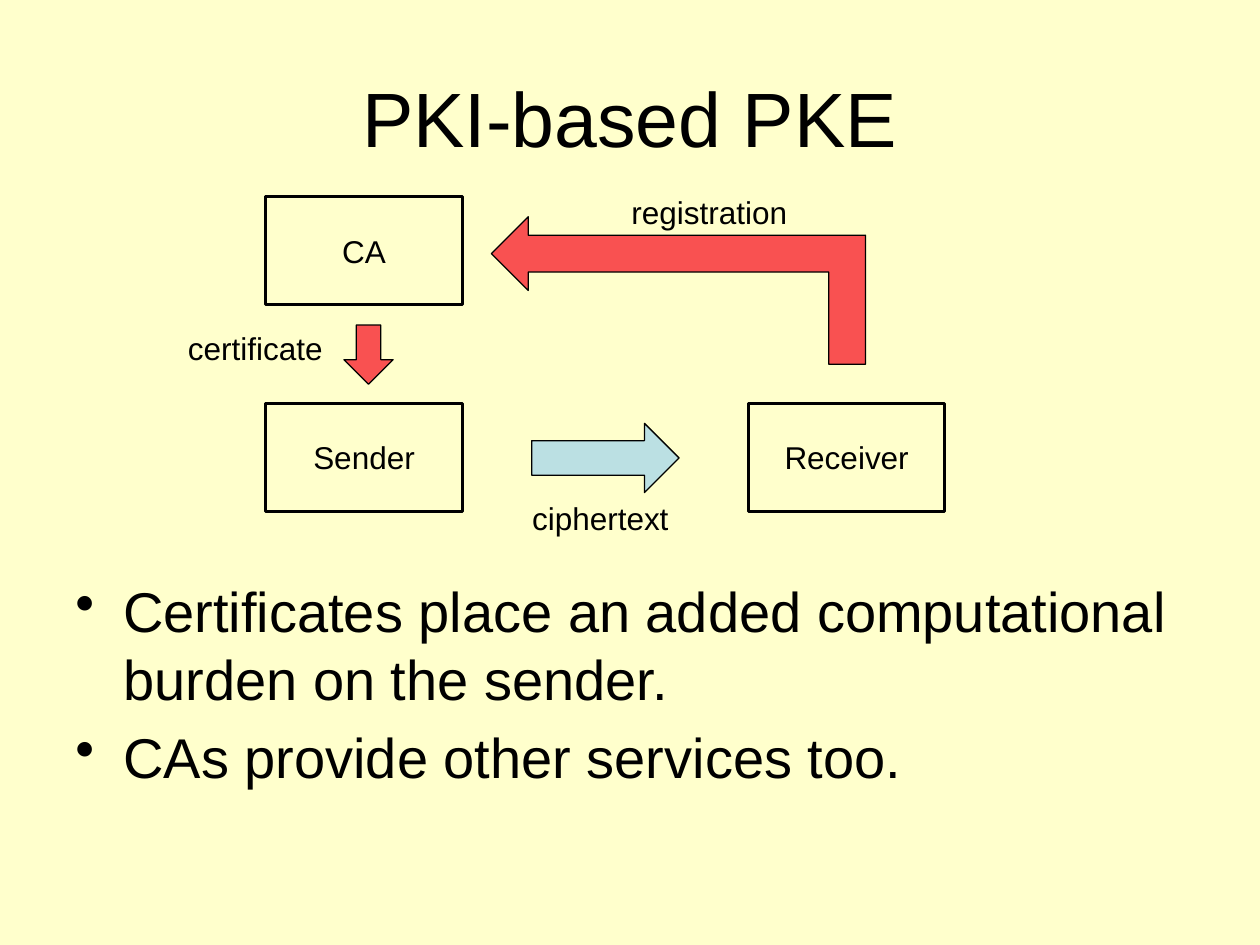
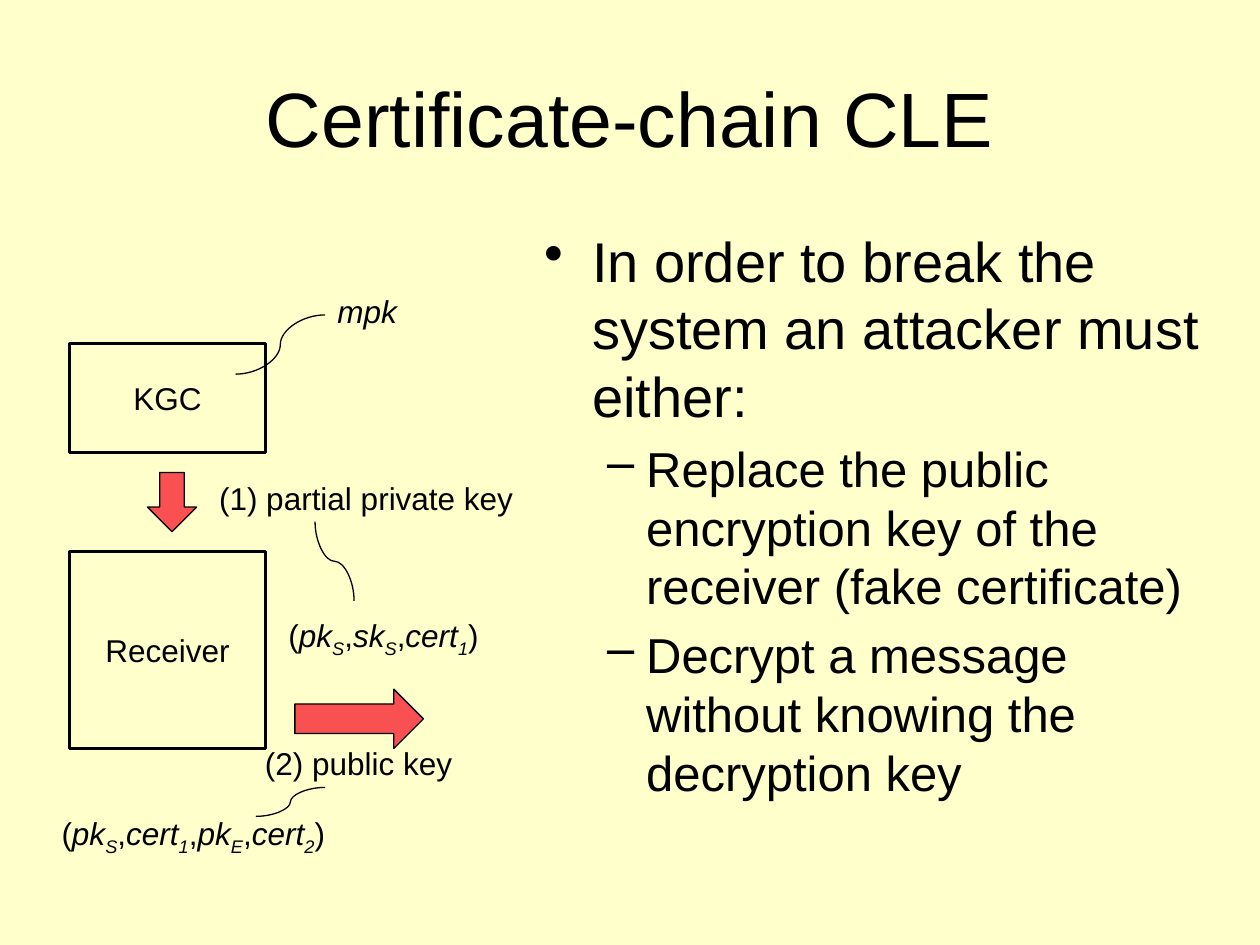
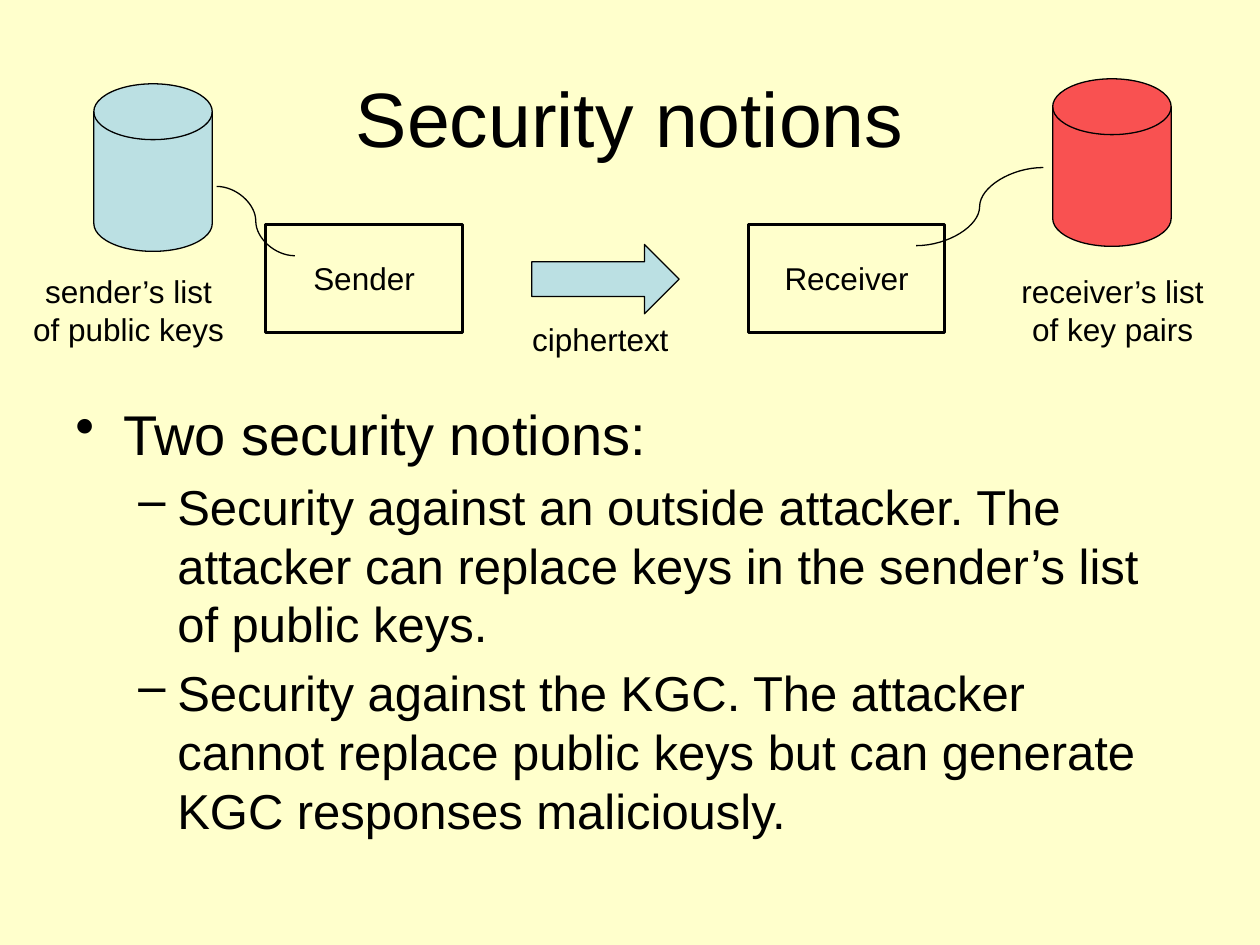
"""Build three slides on public key encryption with certificates."""
from lxml import etree
from pptx import Presentation
from pptx.dml.color import RGBColor
from pptx.enum.shapes import MSO_CONNECTOR, MSO_SHAPE
from pptx.enum.text import MSO_ANCHOR, PP_ALIGN
from pptx.oxml.ns import qn
from pptx.util import Inches, Pt

CURVE = MSO_CONNECTOR.CURVE
RECTANGLE = MSO_SHAPE.RECTANGLE
RIGHT_ARROW = MSO_SHAPE.RIGHT_ARROW
DOWN_ARROW = MSO_SHAPE.DOWN_ARROW
BENT_ARROW = MSO_SHAPE.BENT_UP_ARROW
DRUM = MSO_SHAPE.FLOWCHART_DIRECT_ACCESS_STORAGE
MIDDLE = MSO_ANCHOR.MIDDLE
LEFT, CENTER, RIGHT = PP_ALIGN.LEFT, PP_ALIGN.CENTER, PP_ALIGN.RIGHT

FONT = "Arial"
CREAM, BLACK, RED, BLUE = "FFFFCC", "000000", "F95151", "BBE0E3"
TITLE_SIZE, LABEL_SIZE = 44, 18
THIN, THICK = 0.75, 1.75
PARTY_WIDTH, PARTY_HEIGHT, LABEL_HEIGHT = 1.56, 0.86, 0.4
SENDER_LEFT, RECEIVER_LEFT, KEY_LEFT = 2.11, 5.94, 0.55
BULLETS = [("•", 32, 0.38, 0.38), ("–", 28, 0.81, 0.31)]


def color(value):
    """Turn a hex string into a colour."""
    return RGBColor.from_string(value)


class Deck:
    """Hold the shared style and the current slide."""

    def __init__(self):
        """Start an empty presentation with a cream background."""
        self.presentation = Presentation()
        self.presentation.slide_width = Inches(10)
        self.presentation.slide_height = Inches(7.5)
        fill = self.presentation.slide_master.background.fill
        fill.solid()
        fill.fore_color.rgb = color(CREAM)
        self.slide = None

    def add_slide(self, title):
        """Add a blank slide with a title."""
        layout = self.presentation.slide_layouts[6]
        self.slide = self.presentation.slides.add_slide(layout)
        frame = self.text_frame(0.5, 0.3, 9, 1.25)
        frame.vertical_anchor = MIDDLE
        self.set_text(frame.paragraphs[0], title, TITLE_SIZE, CENTER)

    def text_frame(self, left, top, width, height):
        """Add a wrapping text box and return its frame."""
        box = self.slide.shapes.add_textbox(*map(Inches, (left, top, width, height)))
        box.text_frame.word_wrap = True
        return box.text_frame

    def set_text(self, paragraph, text, size=LABEL_SIZE, alignment=LEFT, italic=False):
        """Fill a paragraph and style it."""
        paragraph.text = text
        paragraph.alignment = alignment
        font = paragraph.font
        font.name, font.size, font.italic = FONT, Pt(size), italic
        font.color.rgb = color(BLACK)

    def label(self, text, left, top, width, alignment=CENTER, height=LABEL_HEIGHT, italic=False):
        """Add a small text label."""
        frame = self.text_frame(left, top, width, height)
        self.set_text(frame.paragraphs[0], text, LABEL_SIZE, alignment, italic)

    def key_tuple(self, names, left, top, width):
        """Add a bracketed tuple of italic names with subscripts."""
        paragraph = self.text_frame(left, top, width, LABEL_HEIGHT).paragraphs[0]
        self.set_text(paragraph, "")
        for index, (name, subscript) in enumerate(names):
            paragraph.add_run().text = "," if index else "("
            for text, baseline in ((name, "0"), (subscript, "-25000")):
                run = paragraph.add_run()
                run.text = text
                run.font.italic = True
                run.font._element.set("baseline", baseline)
        paragraph.add_run().text = ")"

    def bullets(self, box, items):
        """Add a bulleted body from pairs of level and text."""
        frame = self.text_frame(*box)
        for index, (level, text) in enumerate(items):
            paragraph = frame.add_paragraph() if index else frame.paragraphs[0]
            mark, size, margin, hanging = BULLETS[level]
            paragraph.level = level
            properties = paragraph._p.get_or_add_pPr()
            properties.set("marL", str(Inches(margin)))
            properties.set("indent", str(-Inches(hanging)))
            etree.SubElement(properties, qn("a:buChar"), char=mark)
            paragraph.space_before = Pt(0.2 * size if index else 0)
            self.set_text(paragraph, text, size)

    def shape(self, kind, left, top, width, height, fill=None, rotation=0, line_width=THIN):
        """Add an outlined preset shape."""
        shape = self.slide.shapes.add_shape(kind, *map(Inches, (left, top, width, height)))
        shape.shadow.inherit = False
        shape.rotation = rotation
        if fill:
            shape.fill.solid()
            shape.fill.fore_color.rgb = color(fill)
        else:
            shape.fill.background()
        shape.line.color.rgb = color(BLACK)
        shape.line.width = Pt(line_width)
        return shape

    def party(self, name, left, top, height=PARTY_HEIGHT):
        """Add a named box for one party."""
        shape = self.shape(RECTANGLE, left, top, PARTY_WIDTH, height, line_width=THICK)
        shape.text_frame.vertical_anchor = MIDDLE
        self.set_text(shape.text_frame.paragraphs[0], name, LABEL_SIZE, CENTER)

    def channel(self, top):
        """Add a sender, a receiver and the ciphertext between them."""
        self.party("Sender", SENDER_LEFT, top)
        self.party("Receiver", RECEIVER_LEFT, top)
        self.shape(RIGHT_ARROW, 4.22, top + 0.16, 1.17, 0.55, BLUE)
        self.label("ciphertext", 4.06, top + 0.71, 1.41)

    def down_arrow(self, left, top):
        """Add a short red arrow pointing down."""
        self.shape(DOWN_ARROW, left, top, 0.39, 0.47, RED)

    def key_store(self, left, top, fill, text, text_left):
        """Add an upright drum with a caption below."""
        self.shape(DRUM, left, top, 1.33, 0.94, fill, 270)
        self.label(text, text_left, 2.11, 1.72, height=0.71)

    def curve(self, start, end, upright=False):
        """Add a curved line, leaving its start vertically when upright."""
        (x1, y1), (x2, y2) = start, end
        if upright:
            middle_x, middle_y = (x1 + x2) / 2, (y1 + y2) / 2
            half_x, half_y = (y2 - y1) / 2, (x2 - x1) / 2
            x1, x2 = middle_x + half_x, middle_x - half_x
            y1, y2 = middle_y - half_y, middle_y + half_y
        connector = self.slide.shapes.add_connector(CURVE, *map(Inches, (x1, y1, x2, y2)))
        properties = connector._element.spPr
        if upright:
            properties.find(qn("a:xfrm")).set("rot", str(270 * 60000))
        connector.line.color.rgb = color(BLACK)
        connector.line.width = Pt(THIN)
        etree.SubElement(properties, qn("a:effectLst"))


def add_pki(deck):
    """Show encryption based on a public key infrastructure."""
    deck.add_slide("PKI-based PKE")
    deck.bullets((0.5, 4.53, 9, 2.17), [
        (0, "Certificates place an added computational burden on the sender."),
        (0, "CAs provide other services too."),
    ])
    deck.channel(3.2)
    deck.party("CA", SENDER_LEFT, 1.56)
    deck.shape(BENT_ARROW, 4.8, 0.82, 1.17, 2.97, RED, 270)
    deck.down_arrow(2.73, 2.58)
    deck.label("registration", 4.3, 1.48, 2.66)
    deck.label("certificate", 0.86, 2.56, 1.8, RIGHT)


def add_certificate_chain(deck):
    """Show certificateless encryption with a chain of certificates."""
    deck.add_slide("Certificate-chain CLE")
    deck.bullets((4.22, 1.75, 5.55, 4.95), [
        (0, "In order to break the system an attacker must either:"),
        (1, "Replace the public encryption key of the receiver (fake certificate)"),
        (1, "Decrypt a message without knowing the decryption key"),
    ])
    deck.party("Receiver", KEY_LEFT, 4.38, PARTY_WIDTH)
    deck.party("KGC", KEY_LEFT, 2.73)
    deck.down_arrow(1.17, 3.75)
    deck.label("(1) partial private key", 1.64, 3.75, 2.58, LEFT)
    deck.curve((1.87, 2.97), (2.58, 2.5))
    deck.label("mpk", 2.58, 2.27, 0.86, LEFT, italic=True)
    deck.curve((2.5, 4.14), (2.81, 4.77), upright=True)
    deck.key_tuple([("pk", "S"), ("sk", "S"), ("cert", "1")], 2.19, 4.84, 1.88)
    deck.shape(RIGHT_ARROW, 2.34, 5.47, 1.02, 0.47, RED)
    deck.label("(2) public key", 1.87, 5.86, 1.95)
    deck.key_tuple([("pk", "S"), ("cert", "1"), ("pk", "E"), ("cert", "2")], 0.39, 6.41, 2.66)
    deck.curve((2.03, 6.48), (2.58, 6.25))


def add_security_notions(deck):
    """Show the key lists and the two security notions."""
    deck.add_slide("Security notions")
    deck.bullets((0.5, 3.12, 9, 3.57), [
        (0, "Two security notions:"),
        (1, "Security against an outside attacker. The attacker can replace keys "
            "in the sender’s list of public keys."),
        (1, "Security against the KGC. The attacker cannot replace public keys "
            "but can generate KGC responses maliciously."),
    ])
    deck.channel(1.78)
    deck.key_store(0.55, 0.86, BLUE, "sender’s list of public keys", 0.16)
    deck.key_store(8.16, 0.82, RED, "receiver’s list of key pairs", 7.97)
    deck.curve((7.27, 1.95), (8.28, 1.33))
    deck.curve((2.34, 2.03), (1.72, 1.48))


def main():
    """Build and save the slides."""
    deck = Deck()
    add_pki(deck)
    add_certificate_chain(deck)
    add_security_notions(deck)
    deck.presentation.save("out.pptx")


if __name__ == "__main__":
    main()
